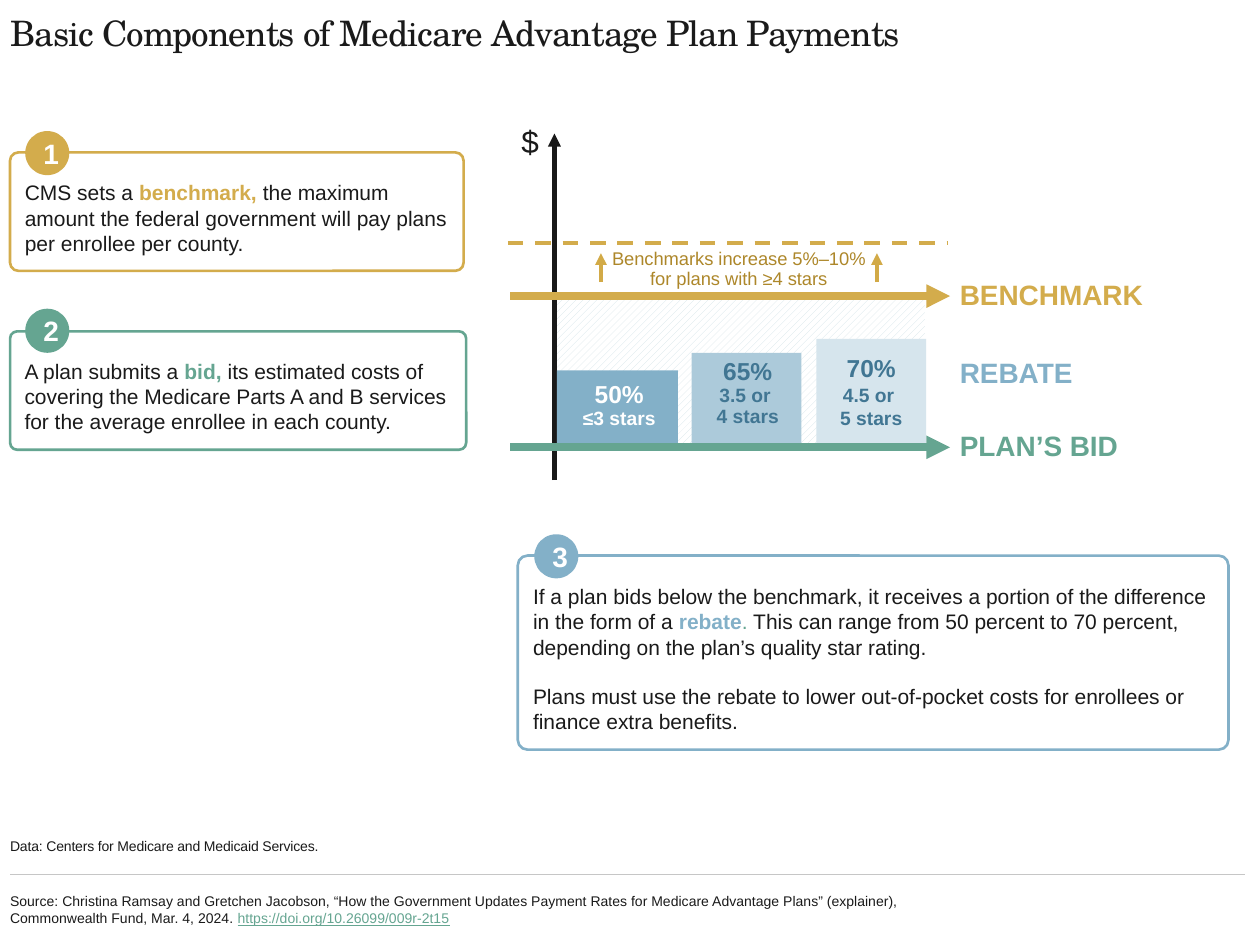
from lxml import etree
from pptx import Presentation
from pptx.dml.color import RGBColor
from pptx.enum.dml import MSO_LINE, MSO_PATTERN
from pptx.enum.shapes import MSO_CONNECTOR, MSO_SHAPE
from pptx.enum.text import MSO_ANCHOR, PP_ALIGN
from pptx.oxml.ns import qn
from pptx.util import Inches, Pt

COLORS = {
    "ink": "1A1A1A", "axis": "191919", "white": "FFFFFF", "rule": "C6C6C6",
    "gold": "D3AC4C", "deep gold": "D2AA47", "dark gold": "AD872A",
    "green": "65A591", "blue": "83B0C8", "mid blue": "ACCADA",
    "pale blue": "D6E5ED", "dark blue": "417693", "hatch": "D4E3E8",
}
DEFAULT_INSETS = (0.1, 0.05, 0.1, 0.05)
NO_INSETS = (0, 0, 0, 0)


def rgb(name):
    """Return the named colour."""
    return RGBColor.from_string(COLORS[name])


def style_span(span, size, color="ink", bold=False, font="Arial", spacing=0):
    """Format one run of text."""
    span.font.name = font
    span.font.size = Pt(size)
    span.font.bold = bold
    span.font.color.rgb = rgb(color)
    if spacing:
        span.font._element.set("spc", str(round(spacing * 100)))


def set_frame(box, insets=DEFAULT_INSETS, anchor=MSO_ANCHOR.TOP):
    """Set wrapping, insets and anchor, and return the text frame."""
    frame = box.text_frame
    frame.word_wrap = True
    frame.vertical_anchor = anchor
    sides = [Inches(inset) for inset in insets]
    frame.margin_left, frame.margin_top, frame.margin_right, frame.margin_bottom = sides
    return frame


def add_text(page, place, text, size, insets=DEFAULT_INSETS, anchor=MSO_ANCHOR.TOP,
             align=PP_ALIGN.LEFT, line_spacing=None, **style):
    """Add a text box in a single style and return its paragraph."""
    box = page.shapes.add_textbox(*map(Inches, place))
    frame = set_frame(box, insets, anchor)
    frame.text = text
    para = frame.paragraphs[0]
    para.alignment = align
    para.line_spacing = line_spacing
    style_span(para.runs[0], size, **style)
    return para


def add_shape(page, kind, place, fill=None, line=None):
    """Add a flat preset shape with an optional fill and outline."""
    shape = page.shapes.add_shape(kind, *map(Inches, place))
    shape.shadow.inherit = False
    if fill:
        shape.fill.solid()
        shape.fill.fore_color.rgb = rgb(fill)
    else:
        shape.fill.background()
    if line:
        shape.line.color.rgb = rgb(line)
        shape.line.width = Pt(1.5)
    else:
        shape.line.fill.background()
    return shape


def add_line(page, start, end, color, width, arrow=False, dashed=False):
    """Add a straight line with an optional arrowhead or dashes."""
    line = page.shapes.add_connector(MSO_CONNECTOR.STRAIGHT, *map(Inches, start + end))
    line.line.color.rgb = rgb(color)
    line.line.width = Pt(width)
    if dashed:
        line.line.dash_style = MSO_LINE.DASH
    if arrow:
        etree.SubElement(line.line._get_or_add_ln(), qn("a:tailEnd"), type="triangle")
    etree.SubElement(line._element.spPr, qn("a:effectLst"))


def add_hatch(page):
    """Add the hatched area between the bid and the benchmark."""
    hatch = add_shape(page, MSO_SHAPE.RECTANGLE, (4.42, 2.37, 2.92, 1.18))
    hatch.fill.patterned()
    hatch.fill.pattern = MSO_PATTERN.WIDE_UPWARD_DIAGONAL
    hatch.fill.fore_color.rgb = rgb("hatch")
    hatch.fill.back_color.rgb = rgb("white")


def add_bar(page, place, fill, text_place, lines, color, spacing, anchor=MSO_ANCHOR.TOP):
    """Add a rebate bar, with its label in the bar or in a box of its own."""
    label = add_shape(page, MSO_SHAPE.RECTANGLE, place, fill)
    if text_place:
        label = page.shapes.add_textbox(*map(Inches, text_place))
    frame = set_frame(label, anchor=anchor)
    frame.text = "\n".join(lines)
    for index, para in enumerate(frame.paragraphs):
        para.alignment = PP_ALIGN.CENTER
        para.line_spacing = spacing if index else None
        style_span(para.runs[0], 11 if index else 14, color, bold=True)


def add_step_box(page, place, corner, color, paragraphs):
    """Add a rounded box whose key words take the colour of the box."""
    box = add_shape(page, MSO_SHAPE.ROUNDED_RECTANGLE, place, line=color)
    box.adjustments[0] = corner
    frame = set_frame(box, (0.1, 0.2, 0.1, 0.1))
    for index, spans in enumerate(paragraphs):
        para = frame.add_paragraph() if index else frame.paragraphs[0]
        para.alignment = PP_ALIGN.LEFT
        if index:
            para.space_before = Pt(14)
        for text, span_color, bold in spans:
            span = para.add_run()
            span.text = text
            style_span(span, 12, span_color, bold)


def add_badge(page, left, top, number, color):
    """Add a numbered circle."""
    badge = add_shape(page, MSO_SHAPE.OVAL, (left, top, 0.35, 0.35), color)
    frame = set_frame(badge, (0.06, 0.05, 0, 0.05), MSO_ANCHOR.MIDDLE)
    frame.text = number
    frame.paragraphs[0].alignment = PP_ALIGN.CENTER
    style_span(frame.paragraphs[0].runs[0], 16, "white", bold=True)


def add_chart_area(page):
    """Add the payment diagram with its axis, levels and bars."""
    add_hatch(page)
    add_line(page, (4.4, 3.81), (4.4, 1.06), "axis", 2.5, arrow=True)
    add_text(page, (4.04, 0.92, 0.33, 0.4), "$", 18)
    add_line(page, (4.05, 2.35), (7.54, 2.35), "gold", 4.5, arrow=True)
    add_bar(page, (4.42, 2.94, 0.96, 0.59), "blue", (4.47, 2.96, 0.89, 0.5),
            ["50%", "≤3 stars"], "white", 0.9)
    add_bar(page, (5.49, 2.8, 0.87, 0.72), "mid blue", (5.52, 2.78, 0.83, 0.67),
            ["65%", "3.5 or ", "4 stars"], "dark blue", 0.9)
    add_bar(page, (6.48, 2.69, 0.87, 0.83), "pale blue", None,
            ["70%", "4.5 or ", "5 stars"], "dark blue", None, MSO_ANCHOR.MIDDLE)
    add_line(page, (4.03, 1.93), (7.52, 1.93), "gold", 2.25, dashed=True)
    for x in (4.77, 6.96):
        add_line(page, (x, 2.24), (x, 2.01), "deep gold", 2.25, arrow=True)
    add_text(page, (4.75, 1.93, 2.23, 0.42),
             "Benchmarks increase 5%–10% for plans with ≥4 stars", 10.5,
             align=PP_ALIGN.CENTER, line_spacing=0.9, color="dark gold")
    add_line(page, (4.05, 3.55), (7.54, 3.55), "green", 4.5, arrow=True)
    for top, text, color in ((2.15, "BENCHMARK", "gold"), (2.77, "REBATE", "blue"),
                             (3.35, "PLAN’S BID", "green")):
        add_text(page, (7.52, top, 2.23, 0.37), text, 16, color=color, bold=True)


def add_steps(page):
    """Add the three numbered explanations."""
    add_step_box(page, (0.08, 1.21, 3.6, 0.94), 0.07, "gold", [[
        ("CMS sets a ", "ink", False), ("benchmark, ", "gold", True),
        ("the maximum amount the federal government will pay plans per enrollee per county.",
         "ink", False)]])
    add_step_box(page, (0.08, 2.63, 3.62, 0.94), 0.06, "green", [[
        ("A plan submits a ", "ink", False), ("bid, ", "green", True),
        ("its estimated costs of covering the Medicare Parts A and B services for the "
         "average enrollee in each county.", "ink", False)]])
    add_step_box(page, (4.11, 4.41, 5.64, 1.54), 0.05, "blue", [
        [("If a plan bids below the benchmark, it receives a portion of the difference "
          "in the form of a ", "ink", False),
         ("rebate", "blue", True), (".", "green", False),
         (" This can range from 50 percent to 70 percent, depending on the plan’s "
          "quality star rating.", "ink", False)],
        [("Plans must use the rebate to lower out-of-pocket costs for enrollees or "
          "finance extra benefits.", "ink", False)]])
    add_badge(page, 0.2, 1.04, "1", "gold")
    add_badge(page, 0.2, 2.45, "2", "green")
    add_badge(page, 4.24, 4.24, "3", "blue")


def add_footer(page):
    """Add the data note, the rule and the source."""
    add_text(page, (0.08, 6.28, 9.8, 0.5), "Data: Centers for Medicare and Medicaid Services.",
             8, NO_INSETS, MSO_ANCHOR.BOTTOM, spacing=-0.1)
    add_line(page, (0.08, 6.94), (9.88, 6.94), "rule", 0.75)
    source = add_text(
        page, (0.08, 6.99, 7.8, 0.46),
        "Source: Christina Ramsay and Gretchen Jacobson, “How the Government Updates Payment "
        "Rates for Medicare Advantage Plans” (explainer), Commonwealth Fund, Mar. 4, 2024. ",
        8, NO_INSETS, MSO_ANCHOR.MIDDLE)
    link = source.add_run()
    link.text = "https://doi.org/10.26099/009r-2t15"
    style_span(link, 8, "green")
    link.font.underline = True


def main():
    """Build and save the slide."""
    deck = Presentation()
    deck.slide_width, deck.slide_height = Inches(10), Inches(7.5)
    page = deck.slides.add_slide(deck.slide_layouts[6])
    add_text(page, (0.08, 0.09, 9.8, 0.47),
             "Basic Components of Medicare Advantage Plan Payments", 20, NO_INSETS,
             font="TeX Gyre Schola", spacing=-0.5)
    add_chart_area(page)
    add_steps(page)
    add_footer(page)
    deck.save("out.pptx")


if __name__ == "__main__":
    main()
